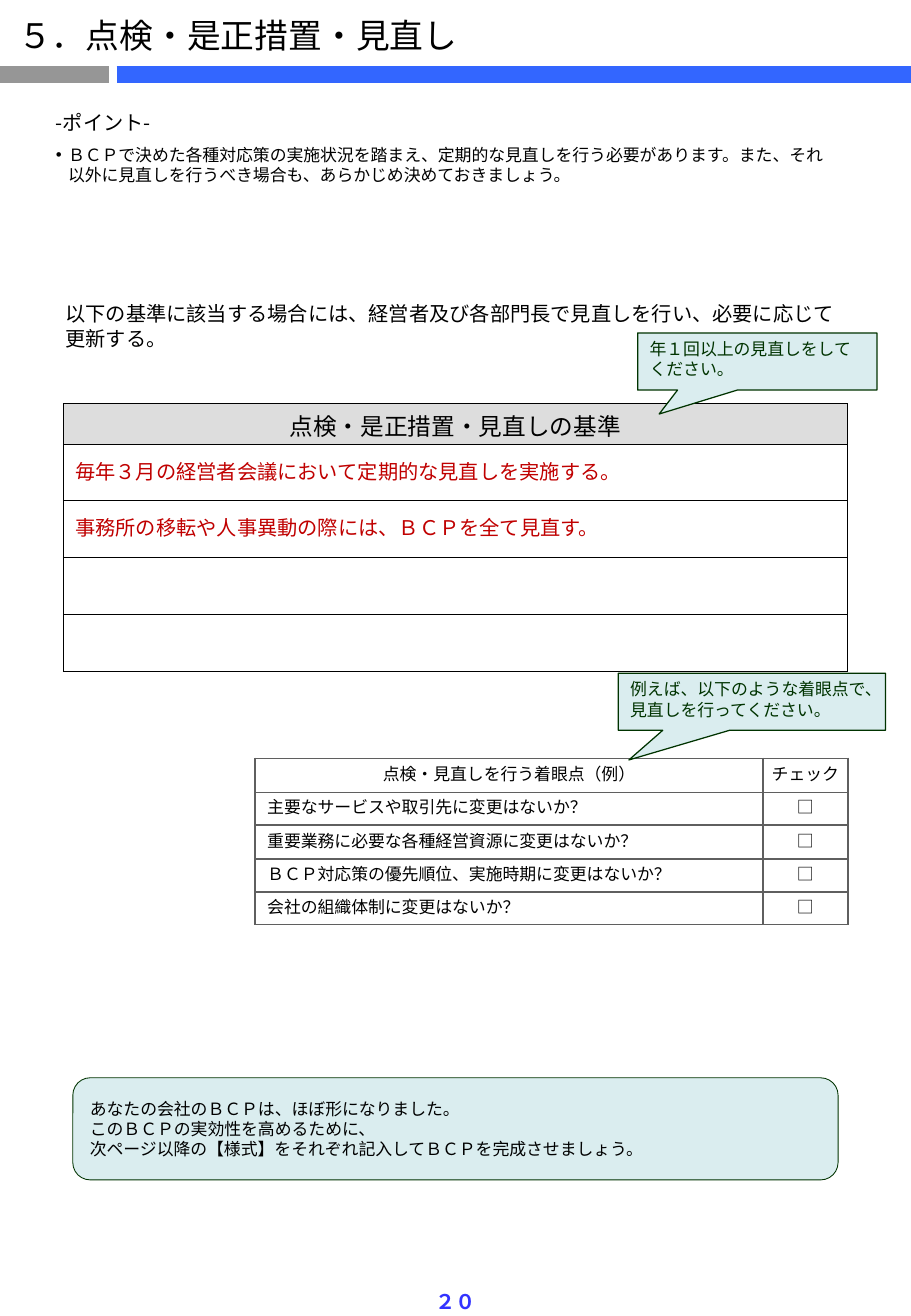
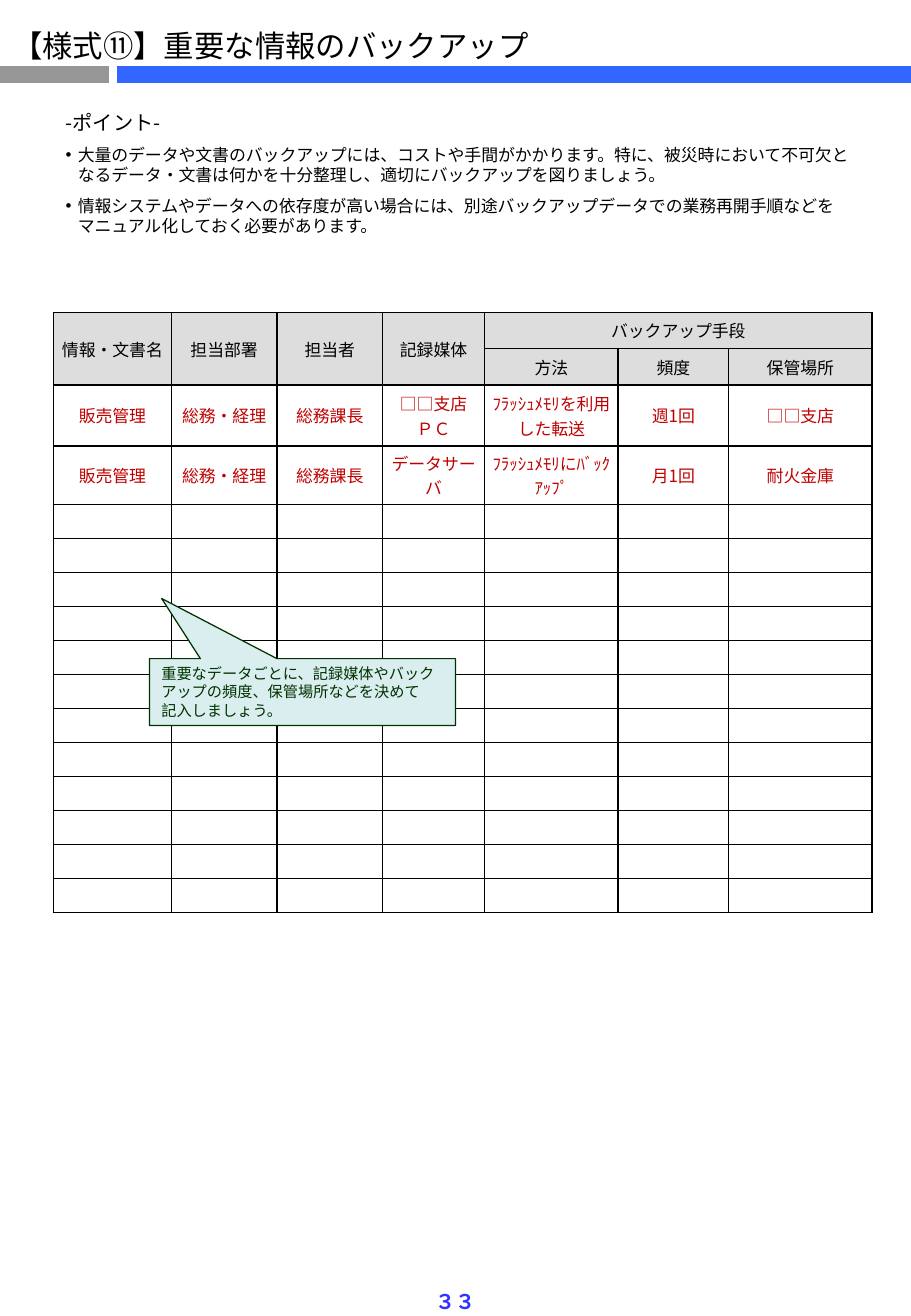
from dataclasses import dataclass

from lxml import etree
from pptx import Presentation
from pptx.dml.color import RGBColor
from pptx.enum import shapes, text
from pptx.oxml import ns
from pptx.util import Inches, Pt


@dataclass(frozen=True)
class Theme:
    font: str = "Noto Sans CJK JP"
    latin: str = "Arial"
    black: str = "000000"
    red: str = "C00000"
    green: str = "003300"
    mint: str = "DAEDEF"
    header: str = "DDDDDD"
    grid: str = "5F5F5F"
    gray: str = "969696"
    blue: str = "3366FF"
    number: str = "3333FF"
    heading: int = 14
    lead: int = 12
    body: int = 10
    small: int = 9


THEME = Theme()
LEFT, CENTER = text.PP_ALIGN.LEFT, text.PP_ALIGN.CENTER
TOP, MIDDLE = text.MSO_ANCHOR.TOP, text.MSO_ANCHOR.MIDDLE

# from x, to x, colour
BANDS = [(0, 0.9, THEME.gray), (0.96, 7.5, THEME.blue)]
POINT = "-ポイント-"

REVIEW = {
    "title": ("５．点検・是正措置・見直し", 20, (0.05, 0.06, 7, 0.43)),
    "points": [
        "ＢＣＰで決めた各種対応策の実施状況を踏まえ、定期的な見直しを行う必要があります。また、それ\n"
        "以外に見直しを行うべき場合も、あらかじめ決めておきましょう。",
    ],
    "points_box": (0.36, 0.85, 6.93, 0.72),
    "number": "２０",
}
BACKUP = {
    "title": ("【様式⑪】重要な情報のバックアップ", 18, (0, 0.16, 7, 0.4)),
    "points": [
        "大量のデータや文書のバックアップには、コストや手間がかかります。特に、被災時において不可欠と"
        "なるデータ・文書は何かを十分整理し、適切にバックアップを図りましょう。",
        "情報システムやデータへの依存度が高い場合には、別途バックアップデータでの業務再開手順などを\n"
        "マニュアル化しておく必要があります。",
    ],
    "points_box": (0.44, 0.85, 6.69, 1.43),
    "number": "３３",
}

INTRO = "以下の基準に該当する場合には、経営者及び各部門長で見直しを行い、必要に応じて\n更新する。"
CRITERIA_TITLE = "点検・是正措置・見直しの基準"
CRITERIA = [
    "毎年３月の経営者会議において定期的な見直しを実施する。",
    "事務所の移転や人事異動の際には、ＢＣＰを全て見直す。",
    "",
    "",
]
CHECK_HEADER = ("点検・見直しを行う着眼点（例）", "チェック")
CHECKS = [
    "主要なサービスや取引先に変更はないか？",
    "重要業務に必要な各種経営資源に変更はないか？",
    "ＢＣＰ対応策の優先順位、実施時期に変更はないか？",
    "会社の組織体制に変更はないか？",
]
CLOSING = [
    "あなたの会社のＢＣＰは、ほぼ形になりました。",
    "このＢＣＰの実効性を高めるために、\n次ページ以降の【様式】をそれぞれ記入してＢＣＰを完成させましょう。",
]

BACKUP_COLUMNS = ["情報・文書名", "担当部署", "担当者", "記録媒体"]
BACKUP_GROUP = "バックアップ手段"
BACKUP_METHODS = ["方法", "頻度", "保管場所"]
BACKUP_ROWS = [
    ["販売管理", "総務・経理", "総務課長", "□□支店|ＰＣ", "ﾌﾗｯｼｭﾒﾓﾘを利用した転送", "週1回", "□□支店"],
    ["販売管理", "総務・経理", "総務課長", "データサーバ", "ﾌﾗｯｼｭﾒﾓﾘにﾊﾞｯｸｱｯﾌﾟ", "月1回", "耐火金庫"],
]
BLANK_ROWS = 12


def color(value):
    return RGBColor.from_string(value)


def inches(values):
    return [Inches(value) for value in values]


def write(frame, lines, size, ink=THEME.black, align=LEFT, anchor=TOP,
          font=THEME.font, bold=False, before=0, tight=True):
    """Fill a text frame; tight sets an exact line pitch."""
    frame.word_wrap = True
    frame.auto_size = text.MSO_AUTO_SIZE.NONE
    frame.vertical_anchor = anchor
    for index, line in enumerate(lines):
        para = frame.paragraphs[0] if index == 0 else frame.add_paragraph()
        para.text = line
        style(para, size, ink, align, font, bold, tight)
        para.space_before = Pt(before)


def style(para, size, ink=THEME.black, align=LEFT, font=THEME.font, bold=False, tight=True):
    para.alignment = align
    if tight:
        para.line_spacing = Pt(round(size * (1.25 if size >= THEME.lead else 1.2), 1))
    for span in para.runs:
        span.font.size = Pt(size)
        span.font.bold = bold
        span.font.name = font
        span.font.color.rgb = color(ink)
        east_asian = etree.SubElement(span.font._element, ns.qn("a:ea"))
        east_asian.set("typeface", THEME.font)
    if not para.runs:
        end = etree.SubElement(para._p, ns.qn("a:endParaRPr"))
        end.set("sz", str(size * 100))


def place(shape, box):
    shape.left, shape.top, shape.width, shape.height = inches(box)


def add_bands(deck, slide):
    """Draw the title bands and hand them to the slide master."""
    for start, end, ink in BANDS:
        band = slide.shapes.add_connector(
            shapes.MSO_CONNECTOR.STRAIGHT, *inches((start, 0.61, end, 0.61)))
        band.line.color.rgb = color(ink)
        band.line.width = Pt(10)
        etree.SubElement(band._element.spPr, ns.qn("a:effectLst"))
        deck.slide_master.shapes.element.append(band._element)


def add_page(deck, content):
    slide = deck.slides.add_slide(deck.slide_layouts[1])
    title, body = slide.shapes.title, slide.placeholders[1]
    words, size, box = content["title"]
    place(title, box)
    write(title.text_frame, [words], size)
    place(body, content["points_box"])
    write(body.text_frame, [POINT] + content["points"], THEME.body)
    for index, para in enumerate(body.text_frame.paragraphs):
        if index == 0:
            style(para, THEME.lead)
        para.space_after = Pt(6)
        properties = para._p.get_or_add_pPr()
        properties.set("marL", str(Inches(0.1)))
        properties.set("indent", str(Inches(-0.1)))
        bullet = etree.SubElement(properties, ns.qn("a:buChar" if index else "a:buNone"))
        if index:
            bullet.set("char", "•")
    add_text(slide, (3.35, 10.55, 0.8, 0.31), [content["number"]], THEME.lead,
             ink=THEME.number, align=CENTER, bold=True)
    return slide


def add_text(slide, box, lines, size, **options):
    write(slide.shapes.add_textbox(*inches(box)).text_frame, lines, size, **options)


def add_panel(slide, kind, box, adjustments, lines, size, ink, width, **options):
    panel = slide.shapes.add_shape(kind, *inches(box))
    panel.shadow.inherit = False
    for index, value in enumerate(adjustments):
        panel.adjustments[index] = value
    panel.fill.solid()
    panel.fill.fore_color.rgb = color(THEME.mint)
    panel.line.color.rgb = color(THEME.green)
    panel.line.width = Pt(width)
    write(panel.text_frame, lines, size, ink=ink, **options)


def add_callout(slide, box, tip, lines, size=THEME.body, before=1):
    add_panel(slide, shapes.MSO_SHAPE.RECTANGULAR_CALLOUT, box, tip, lines, size,
              THEME.green, 0.75, before=before)


def add_grid(slide, left, top, widths, heights):
    frame = slide.shapes.add_table(
        len(heights), len(widths), *inches((left, top, sum(widths), sum(heights))))
    table = frame.table
    table.first_row = table.horz_banding = False
    for column, width in zip(table.columns, widths):
        column.width = Inches(width)
    for row, height in zip(table.rows, heights):
        row.height = Inches(height)
    return table


def fill_cell(cell, words, size, border, fill=None, margins=(0.1, 0.05, 0.1, 0.05), **options):
    """Write a cell; a bar in the words starts a new paragraph."""
    write(cell.text_frame, words.split("|"), size, **options)
    cell.vertical_anchor = MIDDLE
    cell.margin_left, cell.margin_top, cell.margin_right, cell.margin_bottom = inches(margins)
    if fill:
        cell.fill.solid()
        cell.fill.fore_color.rgb = color(fill)
    else:
        cell.fill.background()
    ink, width = border
    properties = cell._tc.get_or_add_tcPr()
    for index, side in enumerate("LRTB"):
        line = etree.Element(ns.qn("a:ln" + side), w=str(Pt(width)))
        solid = etree.SubElement(line, ns.qn("a:solidFill"))
        etree.SubElement(solid, ns.qn("a:srgbClr"), val=ink)
        properties.insert(index, line)


def build_review(slide):
    border = (THEME.black, 0.5)
    criteria = add_grid(slide, 0.52, 3.32, [6.46], [0.34, 0.46] + [0.47] * 3)
    fill_cell(criteria.cell(0, 0), CRITERIA_TITLE, THEME.heading, border, THEME.header,
              margins=(0.1, 0.05, 0.1, 0), align=CENTER)
    for row, words in enumerate(CRITERIA, 1):
        fill_cell(criteria.cell(row, 0), words, THEME.lead, border,
                  ink=THEME.red, font=THEME.latin, before=2.4)

    checks = add_grid(slide, 2.1, 6.24, [4.18, 0.7], [0.28, 0.27, 0.28, 0.27, 0.27])
    for row, cells in enumerate([CHECK_HEADER] + [(words, "□") for words in CHECKS]):
        for column, words in enumerate(cells):
            side = 0.04 if column else 0.1
            fill_cell(checks.cell(row, column), words, THEME.body, (THEME.grid, 1),
                      margins=(side, 0.05, side, 0.05),
                      align=LEFT if row and not column else CENTER)

    add_text(slide, (0.44, 2.42, 6.71, 0.71), [INTRO], THEME.lead)
    add_callout(slide, (5.25, 2.74, 1.97, 0.47), (-0.41, 0.92),
                ["年１回以上の見直しをしてください。"])
    add_callout(slide, (5.09, 5.54, 2.2, 0.47), (-0.46, 1.02),
                ["例えば、以下のような着眼点で、見直しを行ってください。"])
    add_panel(slide, shapes.MSO_SHAPE.ROUNDED_RECTANGLE, (0.6, 8.87, 6.3, 0.84), (0.17,),
              CLOSING, THEME.body, THEME.black, 0.5, anchor=MIDDLE)


def build_backup(slide):
    widths = [0.97, 0.87, 0.87, 0.84, 1.1, 0.91, 1.18]
    table = add_grid(slide, 0.44, 2.57, widths, [0.3, 0.3, 0.5, 0.48] + [0.28] * BLANK_ROWS)
    fixed, last = len(BACKUP_COLUMNS), len(widths) - 1
    rows = [BACKUP_COLUMNS + [BACKUP_GROUP, "", ""], [""] * fixed + BACKUP_METHODS]
    rows += BACKUP_ROWS + [[""] * len(widths)] * BLANK_ROWS
    for row, cells in enumerate(rows):
        header = row < 2
        edge = 0.04 if header else 0.03
        for column, words in enumerate(cells):
            fill_cell(table.cell(row, column), words, THEME.body, (THEME.black, 1),
                      THEME.header if header else None, margins=(0.04, edge, 0.04, edge),
                      ink=THEME.black if header else THEME.red, align=CENTER, tight=False)
    for column in range(fixed):
        table.cell(0, column).merge(table.cell(1, column))
    table.cell(0, fixed).merge(table.cell(0, last))
    add_callout(slide, (1.23, 5.42, 2.52, 0.55), (-0.46, -1.4),
                ["重要なデータごとに、記録媒体やバックアップの頻度、保管場所などを決めて",
                 "記入しましょう。"], THEME.small, before=0)


def main():
    deck = Presentation()
    deck.slide_width, deck.slide_height = inches((7.5, 10.83))
    review = add_page(deck, REVIEW)
    add_bands(deck, review)
    build_review(review)
    build_backup(add_page(deck, BACKUP))
    deck.save("out.pptx")


if __name__ == "__main__":
    main()
